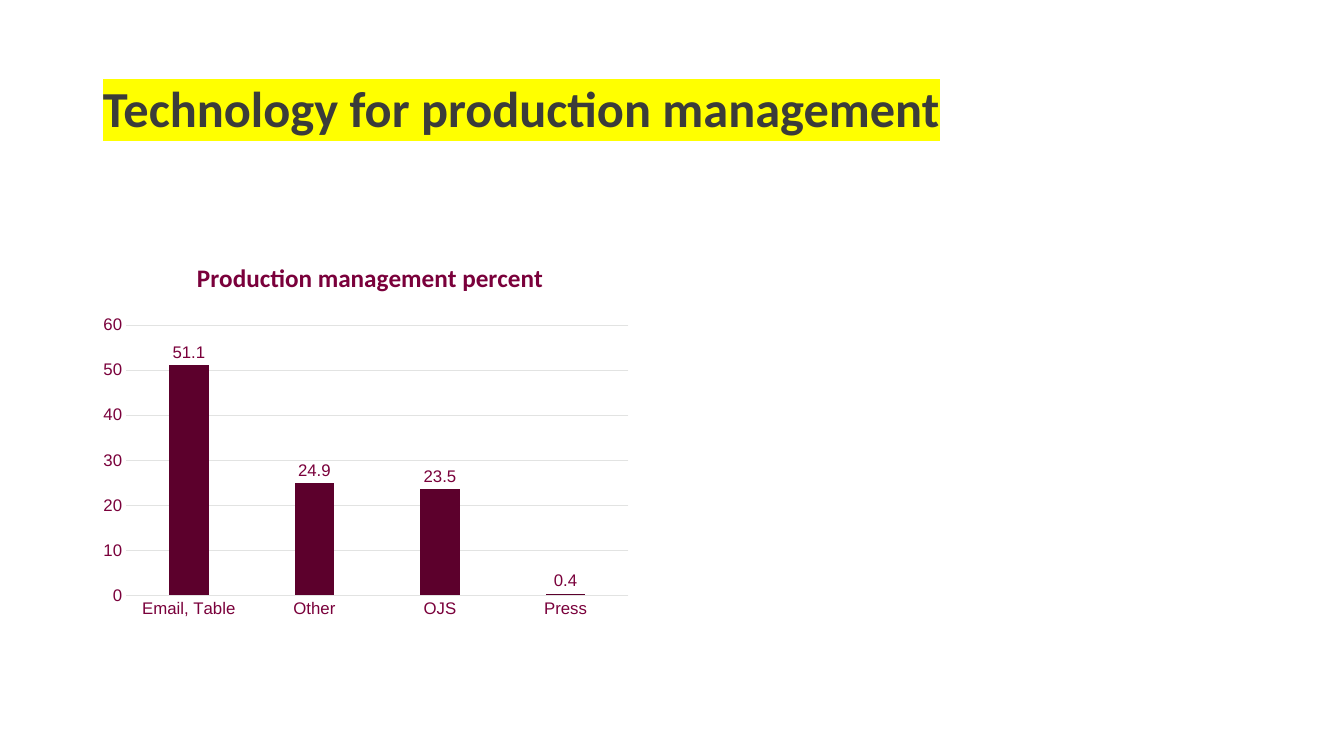
from dataclasses import dataclass

import lxml.etree
import pptx
import pptx.chart.data
import pptx.dml.color
import pptx.enum.chart
import pptx.enum.text
import pptx.oxml
import pptx.oxml.ns
import pptx.util

SCALE = 914400 / 100.8
WINE = "7A003B"
BAR = "5C002C"
GRID = "E2E3E2"
INK = "3B3C3A"
MARK = "FFFF00"


@dataclass
class Share:
    name: str
    value: float


SHARES = [
    Share("Email, Table", 51.1),
    Share("Other", 24.9),
    Share("OJS", 23.5),
    Share("Press", 0.4),
]


def px(size: int) -> int:
    return round(size * SCALE)


def color(code: str) -> pptx.dml.color.RGBColor:
    return pptx.dml.color.RGBColor.from_string(code)


def style(font, face: str, size: int, code: str, bold: bool = False) -> None:
    font.name = face
    font.size = pptx.util.Pt(size)
    font.bold = bold
    font.color.rgb = color(code)


def place(parent, spot: int, **parts) -> None:
    names = pptx.oxml.ns.nsdecls("c")
    body = "".join(f'<c:{key} val="{val}"/>' for key, val in parts.items())
    for old in parent.findall(pptx.oxml.ns.qn("c:layout")):
        parent.remove(old)
    parent.insert(spot, pptx.oxml.parse_xml(
        f"<c:layout {names}><c:manualLayout>{body}</c:manualLayout></c:layout>"))


def add_title(slide) -> None:
    box = slide.shapes.add_textbox(px(93), px(79), px(985), px(146))
    frame = box.text_frame
    frame.word_wrap = True
    frame.vertical_anchor = pptx.enum.text.MSO_ANCHOR.TOP
    para = frame.paragraphs[0]
    para.line_spacing = 0.9
    run = para.add_run()
    run.text = "Technology for production management"
    style(para.font, "Calibri", 36, INK, True)
    props = run._r.get_or_add_rPr()
    mark = lxml.etree.SubElement(props, pptx.oxml.ns.qn("a:highlight"))
    lxml.etree.SubElement(mark, pptx.oxml.ns.qn("a:srgbClr"), val=MARK)


def set_axis(axis) -> None:
    none = pptx.enum.chart.XL_TICK_MARK.NONE
    axis.major_tick_mark = none
    axis.minor_tick_mark = none
    axis.format.line.fill.background()
    style(axis.tick_labels.font, "Arial", 12, WINE)


def add_chart(slide) -> None:
    data = pptx.chart.data.CategoryChartData()
    data.categories = [share.name for share in SHARES]
    data.add_series("Series 1", [share.value for share in SHARES])
    kind = pptx.enum.chart.XL_CHART_TYPE.COLUMN_CLUSTERED
    chart = slide.shapes.add_chart(
        kind, px(93), px(238), px(552), px(436), data).chart
    style(chart.font, "Arial", 10, WINE)
    chart.has_legend = False

    chart.has_title = True
    title = chart.chart_title
    para = title.text_frame.paragraphs[0]
    para.text = "Production management percent"
    style(para.font, "Calibri", 18, WINE, True)
    title.include_in_layout = False
    place(title._element, 1, xMode="edge", yMode="edge", x=0.18, y=0.04)

    set_axis(chart.category_axis)
    axis = chart.value_axis
    set_axis(axis)
    axis.minimum_scale, axis.maximum_scale, axis.major_unit = 0, 60, 10
    axis.has_major_gridlines = True
    grid = axis.major_gridlines.format.line
    grid.color.rgb = color(GRID)
    grid.width = pptx.util.Pt(0.5)

    plot = chart.plots[0]
    plot.vary_by_categories = False
    plot.gap_width = 219
    plot.overlap = -27
    fill = plot.series[0].format.fill
    fill.solid()
    fill.fore_color.rgb = color(BAR)
    plot.has_data_labels = True
    labels = plot.data_labels
    labels.show_value = True
    labels.position = pptx.enum.chart.XL_LABEL_POSITION.OUTSIDE_END
    style(labels.font, "Arial", 12, WINE)
    area = chart._chartSpace.chart.plotArea
    place(area, 0, layoutTarget="inner", xMode="edge", yMode="edge",
          x=0.06, y=0.2, w=0.91, h=0.62)


def main() -> None:
    deck = pptx.Presentation()
    deck.slide_width, deck.slide_height = px(1344), px(756)
    slide = deck.slides.add_slide(deck.slide_layouts[6])
    add_chart(slide)
    add_title(slide)
    deck.save("out.pptx")


if __name__ == "__main__":
    main()
